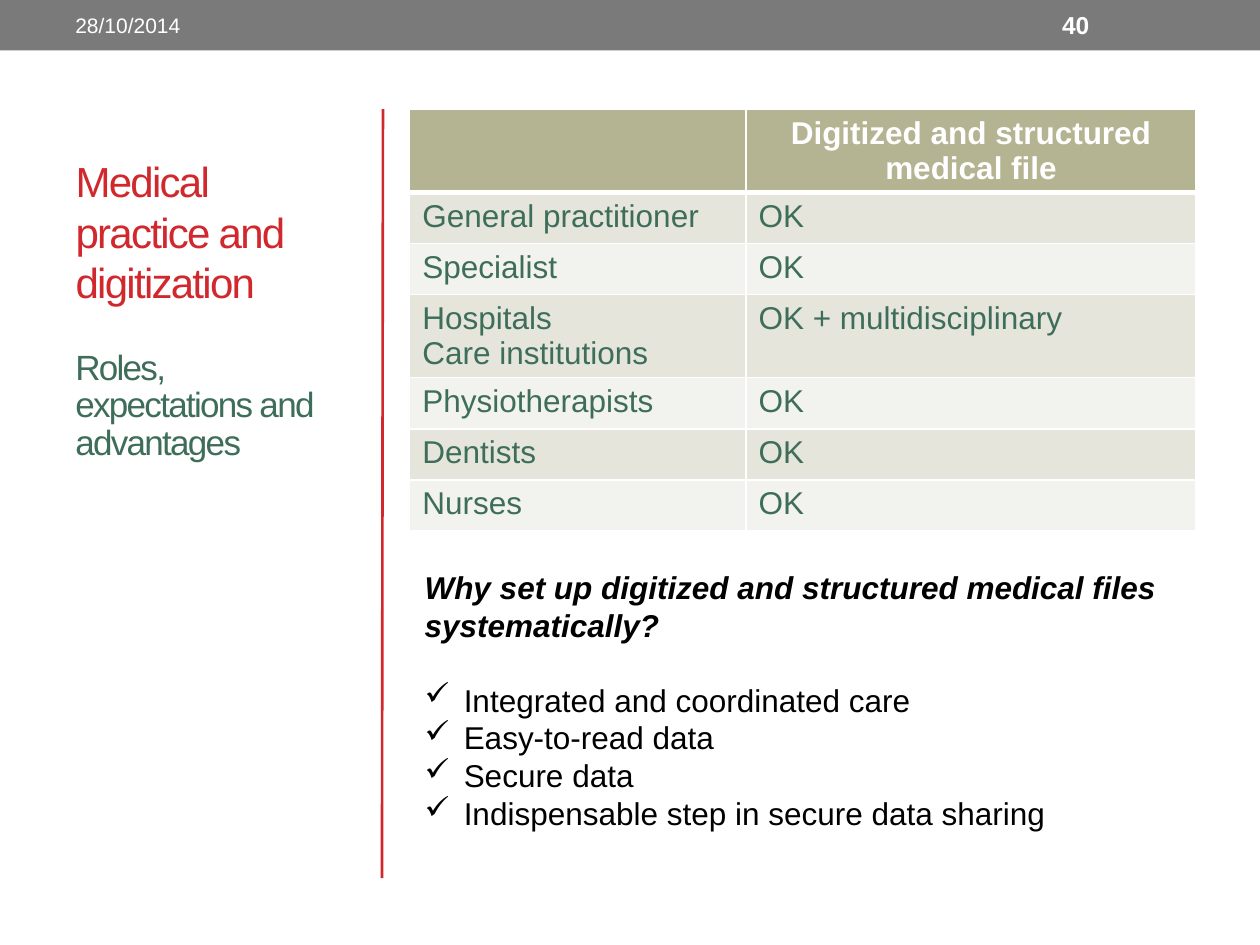
from lxml import etree
from pptx import Presentation
from pptx import util as u
from pptx.dml.color import RGBColor
from pptx.enum import shapes, text
from pptx.oxml.ns import qn

RED, GREEN, WHITE, BLACK = "D1282E", "3E6E5A", "FFFFFF", "000000"
GREY, HEAD, BANDS = "7A7A7A", "B4B392", ("E5E5DC", "F2F2EE")
TITLE = "Medical practice and digitization"
ROLES = "Roles, expectations and advantages"
ROWS = [
    ("", "Digitized and structured medical file"),
    ("General practitioner", "OK"),
    ("Specialist", "OK"),
    ("Hospitals\nCare institutions", "OK + multidisciplinary"),
    ("Physiotherapists", "OK"),
    ("Dentists", "OK"),
    ("Nurses", "OK"),
]
COLS = (6.78, 9.07)
LOW, TALL = 1.03, 1.67
ASK = "Why set up digitized and structured medical files systematically?"
GAINS = [
    "Integrated and coordinated care",
    "Easy-to-read data",
    "Secure data",
    "Indispensable step in secure data sharing",
]


def cm(*sizes):
    """Turn numbers into lengths."""
    return [u.Cm(size) for size in sizes]


def paint(color, code):
    """Set a colour from its hex string."""
    color.rgb = RGBColor.from_string(code)


def fill(item, code):
    """Fill a shape or cell with one colour."""
    item.fill.solid()
    paint(item.fill.fore_color, code)


def style(para, size, code, bold=False, italic=False):
    """Set the font of a paragraph."""
    font = para.font
    font.name, font.size = "Arial", u.Pt(size)
    font.bold, font.italic = bold, italic
    paint(font.color, code)


def tighten(para):
    """Draw the letters of a paragraph one point closer."""
    for run in para.runs:
        run.font._element.set("spc", "-100")


def write(slide, box, words, size, code, bold=False, anchor=text.MSO_ANCHOR.TOP):
    """Add a wrapped text box and return its frame."""
    frame = slide.shapes.add_textbox(*cm(*box)).text_frame
    frame.word_wrap, frame.vertical_anchor = True, anchor
    frame.text = words
    style(frame.paragraphs[0], size, code, bold)
    return frame


def border(cell, widths):
    """Draw white borders, with widths given by side."""
    props = cell._tc.get_or_add_tcPr()
    for side, width in widths.items():
        line = etree.SubElement(props, qn("a:ln" + side), w=str(u.Pt(width)))
        solid = etree.SubElement(line, qn("a:solidFill"))
        etree.SubElement(solid, qn("a:srgbClr"), val=WHITE)


def add_frame(slide):
    """Add the top band and the dividing line."""
    band = slide.shapes.add_shape(shapes.MSO_SHAPE.RECTANGLE, *cm(0, 0, 25.4, 1.02))
    band.shadow.inherit = False
    fill(band, GREY)
    band.line.fill.background()
    rule = slide.shapes.add_connector(
        shapes.MSO_CONNECTOR.STRAIGHT, *cm(7.72, 2.2, 7.7, 17.7))
    paint(rule.line.color, RED)
    rule.line.width = u.Pt(1.5)
    etree.SubElement(rule._element.spPr, qn("a:effectLst"))


def add_title(slide):
    """Place and format the title."""
    title = slide.shapes.title
    title.left, title.top, title.width, title.height = cm(1.27, 2.2, 5.94, 4.12)
    frame = title.text_frame
    frame.text = TITLE
    frame.word_wrap, frame.auto_size = True, text.MSO_AUTO_SIZE.NONE
    frame.vertical_anchor = text.MSO_ANCHOR.BOTTOM
    para = frame.paragraphs[0]
    para.alignment = text.PP_ALIGN.LEFT
    style(para, 24, RED)
    tighten(para)


def add_roles(slide):
    """Add the table of roles."""
    highs = [TALL if not i or "\n" in row[0] else LOW for i, row in enumerate(ROWS)]
    grid = slide.shapes.add_table(
        len(ROWS), len(COLS), *cm(8.26, 2.2, sum(COLS), sum(highs))).table
    for col, width in zip(grid.columns, COLS):
        col.width = u.Cm(width)
    for i, (row, high) in enumerate(zip(ROWS, highs)):
        grid.rows[i].height = u.Cm(high)
        for j, words in enumerate(row):
            cell = grid.cell(i, j)
            cell.text = words
            border(cell, {"L": 1, "R": 1, "T": 3 if i == 1 else 1, "B": 1 if i else 3})
            fill(cell, BANDS[(i - 1) % 2] if i else HEAD)
            for para in cell.text_frame.paragraphs:
                style(para, 18, GREEN if i else WHITE, bold=not i)
                if not i:
                    para.alignment = text.PP_ALIGN.CENTER


def add_gains(slide):
    """Add the question and its ticked answers."""
    frame = write(slide, (8.31, 11.33, 15.8, 7.19), ASK, 18, BLACK, True)
    frame.paragraphs[0].font.italic = True
    frame.paragraphs[0].space_after = u.Pt(21)
    for gain in GAINS:
        para = frame.add_paragraph()
        para.text = gain
        style(para, 18, BLACK)
        props = para._p.get_or_add_pPr()
        props.set("marL", str(u.Cm(0.79)))
        props.set("indent", str(u.Cm(-0.79)))
        mark = etree.Element(qn("a:buChar"), char="✓")
        props.insert(0, mark)


def main():
    """Build and save the slide."""
    deck = Presentation()
    deck.slide_width, deck.slide_height = cm(25.4, 19.05)
    slide = deck.slides.add_slide(deck.slide_layouts[5])
    add_frame(slide)
    add_title(slide)
    add_roles(slide)
    roles = write(slide, (1.27, 6.93, 5.94, 10.77), ROLES, 20, GREEN).paragraphs[0]
    roles.line_spacing = 0.9
    tighten(roles)
    mid = text.MSO_ANCHOR.MIDDLE
    write(slide, (1.27, 0.05, 8.05, 0.91), "28/10/2014", 12, WHITE, anchor=mid)
    write(slide, (21.16, 0.05, 2.97, 0.91), "40", 14, WHITE, True, mid)
    add_gains(slide)
    deck.save("out.pptx")


if __name__ == "__main__":
    main()
